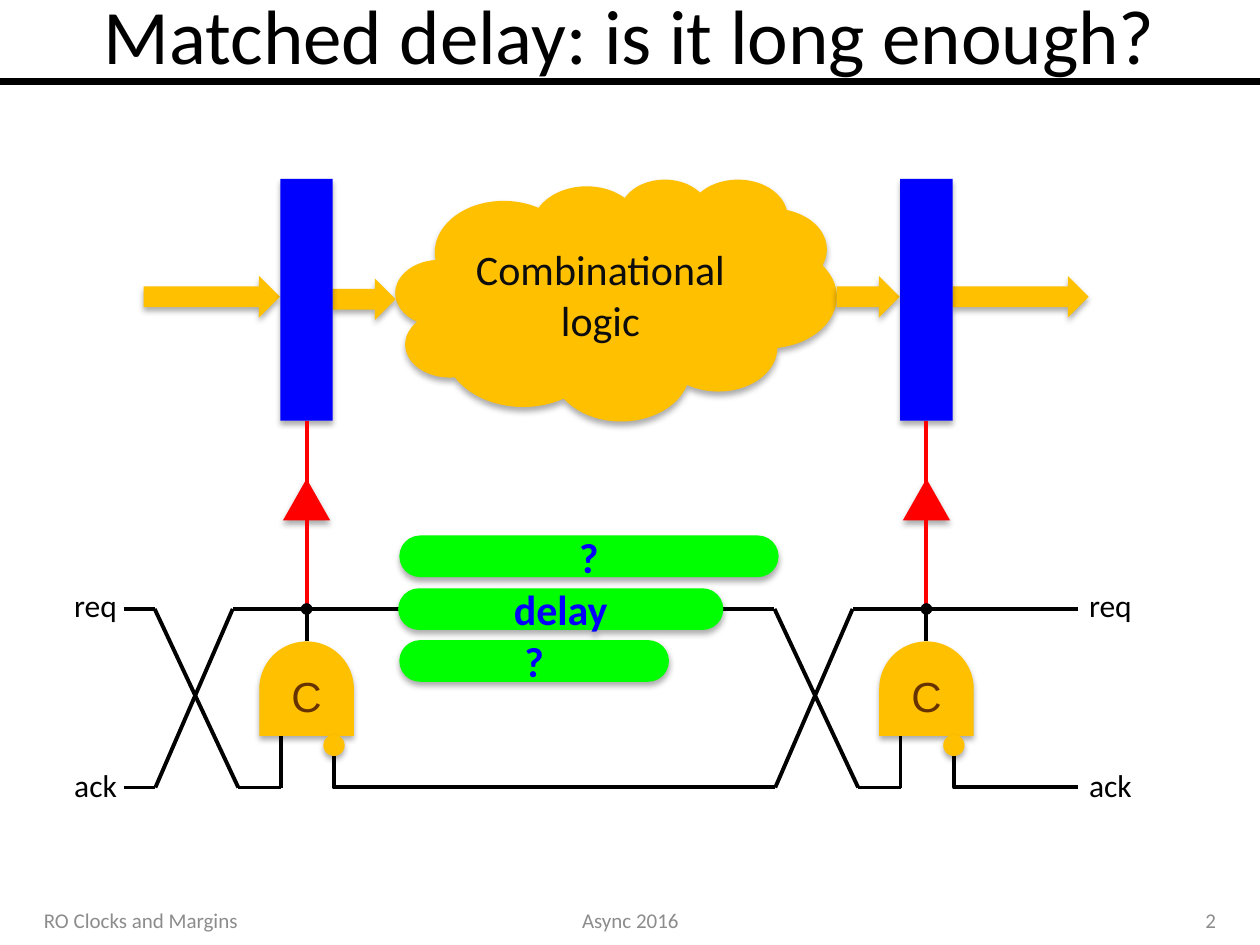
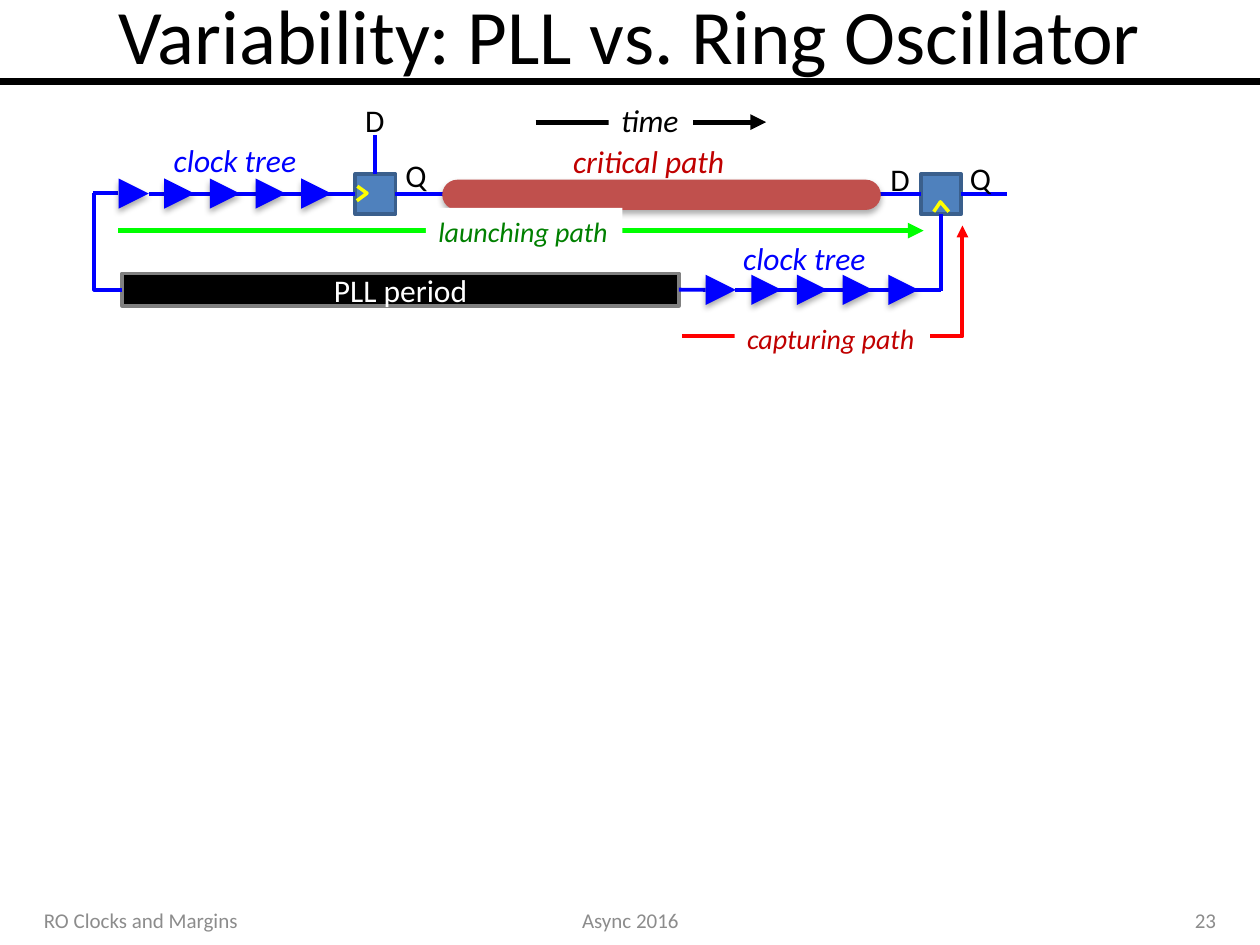
"""Build two slides on matched delays and clock variability."""
from dataclasses import dataclass
from typing import Any, Optional, Sequence

from lxml import etree
from pptx import Presentation
from pptx.dml.color import RGBColor
from pptx.enum.shapes import MSO_CONNECTOR, MSO_SHAPE
from pptx.enum.text import MSO_ANCHOR, MSO_AUTO_SIZE, PP_ALIGN
from pptx.oxml.ns import qn
from pptx.util import Pt

RECT = MSO_SHAPE.RECTANGLE
CAPSULE = MSO_SHAPE.ROUNDED_RECTANGLE
ARROW = MSO_SHAPE.RIGHT_ARROW
TRIANGLE = MSO_SHAPE.ISOSCELES_TRIANGLE
CLOUD = MSO_SHAPE.CLOUD
GATE = MSO_SHAPE.FLOWCHART_DELAY
CIRCLE = MSO_SHAPE.OVAL
STRAIGHT = MSO_CONNECTOR.STRAIGHT
ELBOW = MSO_CONNECTOR.ELBOW
MIDDLE = MSO_ANCHOR.MIDDLE
LEFT, CENTER, RIGHT = PP_ALIGN.LEFT, PP_ALIGN.CENTER, PP_ALIGN.RIGHT
FIT = MSO_AUTO_SIZE.SHAPE_TO_FIT_TEXT
TOP_SIDE, LEFT_SIDE, BOTTOM_SIDE, RIGHT_SIDE = range(4)

COLORS = {
    "black": "000000", "white": "FFFFFF", "ink": "0D0D0D", "footer": "8C8C8C",
    "blue": "0000FF", "red": "FF0000", "amber": "FFC000", "brown": "663300",
    "lime": "00FF00", "green": "008000", "crimson": "C00000", "brick": "C0504D",
    "steel": "4F81BD", "steel_edge": "3A5F8C", "gray": "808080", "yellow": "FFFF00",
}
STAGE_PITCH = 354.2
REQ_Y, ACK_Y = 348, 450
BUFFER_COUNT, BUFFER_PITCH, BUFFER_SIZE = 5, 26.1, 17.3


@dataclass(frozen=True)
class Words:
    """Text and its look."""
    text: str
    size: float
    color: str = "black"
    font: str = "Calibri"
    bold: bool = False
    italic: bool = False
    align: Any = CENTER


@dataclass(frozen=True)
class Block:
    """A filled shape, in points."""
    kind: Any
    left: float
    top: float
    width: float
    height: float
    fill: str
    words: Optional[Words] = None
    edge: Optional[str] = None
    shadow: bool = True
    turn: float = 0


@dataclass(frozen=True)
class Label:
    """A text box, in points."""
    left: float
    top: float
    width: float
    height: float
    words: Words
    fill: Optional[str] = None
    fitted: bool = True


@dataclass(frozen=True)
class Wire:
    """A line between two points, with optional joints given as (shape, side)."""
    start: tuple
    end: tuple
    color: str = "black"
    weight: float = 2.25
    tip: Optional[str] = None
    begin_at: Optional[tuple] = None
    end_at: Optional[tuple] = None
    bent: bool = False


def rgb(name: str) -> RGBColor:
    """Look up a named colour."""
    return RGBColor.from_string(COLORS[name])


def write(frame: Any, words: Words) -> None:
    """Put words into a text frame."""
    para = frame.paragraphs[0]
    para.alignment = words.align
    for index, line in enumerate(words.text.split("\n")):
        if index:
            para.add_line_break()
        span = para.add_run()
        span.text = line
        span.font.size = Pt(words.size)
        span.font.name = words.font
        span.font.bold = words.bold
        span.font.italic = words.italic
        span.font.color.rgb = rgb(words.color)


def cast_shadow(shape: Any) -> None:
    """Add a soft shadow below a shape."""
    effects = shape.element.spPr.find(qn("a:effectLst"))
    outer = etree.SubElement(effects, qn("a:outerShdw"), blurRad=str(Pt(3.5)),
                             dist=str(Pt(2.2)), dir="5400000", rotWithShape="0")
    color = etree.SubElement(outer, qn("a:srgbClr"), val=COLORS["black"])
    etree.SubElement(color, qn("a:alpha"), val="32000")


def draw_block(page: Any, block: Block) -> Any:
    """Draw a filled shape."""
    shape = page.shapes.add_shape(block.kind, Pt(block.left), Pt(block.top),
                                  Pt(block.width), Pt(block.height))
    shape.rotation = block.turn
    shape.fill.solid()
    shape.fill.fore_color.rgb = rgb(block.fill)
    if block.edge:
        shape.line.color.rgb = rgb(block.edge)
        shape.line.width = Pt(2)
    else:
        shape.line.fill.background()
    shape.shadow.inherit = False
    if block.shadow:
        cast_shadow(shape)
    if block.kind == CAPSULE:
        shape.adjustments[0] = 0.5
    if block.words:
        shape.text_frame.vertical_anchor = MIDDLE
        write(shape.text_frame, block.words)
    return shape


def draw_label(page: Any, label: Label) -> None:
    """Draw a text box."""
    box = page.shapes.add_textbox(Pt(label.left), Pt(label.top),
                                  Pt(label.width), Pt(label.height))
    frame = box.text_frame
    frame.word_wrap = not label.fitted
    if label.fitted:
        frame.auto_size = FIT
    else:
        frame.vertical_anchor = MIDDLE
    if label.fill:
        box.fill.solid()
        box.fill.fore_color.rgb = rgb(label.fill)
    write(frame, label.words)


def draw_wire(page: Any, wire: Wire) -> None:
    """Draw a straight or one-corner line."""
    line = page.shapes.add_connector(ELBOW if wire.bent else STRAIGHT,
                                     *map(Pt, wire.start + wire.end))
    if wire.begin_at:
        line.begin_connect(*wire.begin_at)
    if wire.end_at:
        line.end_connect(*wire.end_at)
    line.line.color.rgb = rgb(wire.color)
    line.line.width = Pt(wire.weight)
    props = line.element.spPr
    if wire.bent:
        props.find(qn("a:prstGeom")).set("prst", "bentConnector2")
    if wire.tip:
        etree.SubElement(props.find(qn("a:ln")), qn("a:tailEnd"), type=wire.tip)
    etree.SubElement(props, qn("a:effectLst"))


def draw_route(page: Any, points: Sequence[tuple]) -> None:
    """Draw black wires through a row of points."""
    for start, end in zip(points, points[1:]):
        draw_wire(page, Wire(start, end))


def draw_chevron(page: Any, points: Sequence[tuple]) -> None:
    """Draw the clock mark of a flip-flop."""
    corners = [tuple(map(Pt, point)) for point in points]
    builder = page.shapes.build_freeform(*corners[0], scale=1.0)
    builder.add_line_segments(corners[1:], close=False)
    mark = builder.convert_to_shape()
    mark.fill.background()
    mark.line.color.rgb = rgb("yellow")
    mark.line.width = Pt(2)
    mark.shadow.inherit = False


def add_page(deck: Any, title: str, number: str) -> Any:
    """Add a page with title, rule and footers."""
    page = deck.slides.add_slide(deck.slide_layouts[6])
    draw_wire(page, Wire((0, 46.8), (720, 46.8), weight=4))
    draw_label(page, Label(36, -7.9, 648, 54, Words(title, 44), fitted=False))
    footers = ((18, 167.8, "RO Clocks and Margins", LEFT),
               (246.2, 228.2, "Async 2016", CENTER),
               (534.2, 167.8, number, RIGHT))
    for left, width, text, align in footers:
        words = Words(text, 12, "footer", align=align)
        draw_label(page, Label(left, 511.2, width, 28.8, words, fitted=False))
    return page


def draw_stage(page: Any, shift: float) -> None:
    """Draw a register with its clock driver and C element."""
    center = 175.2 + shift
    register = draw_block(page, Block(RECT, center - 15, 102.2, 30, 138.2, "blue"))
    draw_block(page, Block(TRIANGLE, center - 13.5, 273.6, 27, 23.8, "red"))
    draw_wire(page, Wire((center, 240.4), (center, 275.8), "red",
                         begin_at=(register, BOTTOM_SIDE)))
    draw_wire(page, Wire((center, 297.4), (center, REQ_Y), "red"))
    draw_wire(page, Wire((center, 366.5), (center, REQ_Y), tip="oval"))
    draw_route(page, [(88.4 + shift, REQ_Y), (136.2 + shift, ACK_Y),
                      (160.4 + shift, ACK_Y), (160.4 + shift, 419.8)])
    draw_route(page, [(center, REQ_Y), (133 + shift, REQ_Y), (88.8 + shift, ACK_Y)])
    gate = draw_block(page, Block(GATE, center - 27, 366.5, 54, 54, "amber",
                                  Words("C", 24, "brown", "Arial"), turn=270))
    gate.text_frame.word_wrap = False
    gate.text_frame._txBody.bodyPr.set("vert", "vert")
    draw_block(page, Block(CIRCLE, center + 9.6, 419.8, 12.2, 12.2, "amber"))


def build_matched_delay(deck: Any) -> None:
    """Build the matched delay page."""
    page = add_page(deck, "Matched delay: is it long enough?", "2")
    draw_block(page, Block(CLOUD, 226.1, 102.2, 252, 138.2, "amber",
                           Words("Combinational\nlogic", 24, "ink")))
    for left, top, width in ((82.1, 157.7, 77.8), (190.1, 159.1, 36),
                             (478.1, 157.7, 36), (544.3, 157.7, 77.8)):
        draw_block(page, Block(ARROW, left, top, width, 23.8, "amber"))
    for shift in (0, STAGE_PITCH):
        draw_stage(page, shift)
    for start, end, y in ((70.6, 88.6, REQ_Y), (175.2, 442.4, REQ_Y),
                          (529.4, 616.3, REQ_Y), (70.6, 88.6, ACK_Y)):
        draw_wire(page, Wire((start, y), (end, y)))
    for start, end in ((443.2, 190.8), (616.3, 545.3)):
        draw_wire(page, Wire((start, ACK_Y), (end, 432), bent=True))
    for left, top, width, text in ((227.5, 336.2, 185.8, "delay"),
                                   (228.2, 365.8, 154.1, "?"),
                                   (228.2, 306, 216.7, "?")):
        draw_block(page, Block(CAPSULE, left, top, width, 23.8, "lime",
                               Words(text, 24, "blue", bold=True)))
    for left in (35.3, 615.2):
        for top, text in ((331.2, "req"), (434.2, "ack")):
            draw_label(page, Label(left, top, 39.2, 28.8, Words(text, 18, align=LEFT)))


def draw_buffers(page: Any, left: float, top: float) -> None:
    """Draw the row of buffers of a clock tree."""
    for index in range(BUFFER_COUNT):
        draw_block(page, Block(TRIANGLE, left + index * BUFFER_PITCH, top,
                               BUFFER_SIZE, BUFFER_SIZE, "blue", turn=90))


def build_variability(deck: Any) -> None:
    """Build the clock variability page."""
    page = add_page(deck, "Variability: PLL vs. Ring Oscillator", "23")
    launch, capture = (
        draw_block(page, Block(RECT, left, 99.4, 23, 23, "steel", edge="steel_edge",
                               shadow=False)) for left in (203, 526.3))
    period = draw_block(page, Block(RECT, 69.8, 156.2, 318.2, 18.7, "black",
                                    Words("PLL period", 18, "white"), "gray", False))
    wires = (
        Wire((419.8, 165.6), (537.8, 165.6), "blue"),
        Wire((403.2, 165.6), (388, 165.6), "blue", end_at=(period, RIGHT_SIDE)),
        Wire((69.8, 165.6), (54, 110.4), "blue", begin_at=(period, LEFT_SIDE), bent=True),
        Wire((85, 110.9), (203, 110.9), "blue", end_at=(launch, LEFT_SIDE)),
        Wire((67.7, 110.4), (53, 110.4), "blue"),
        Wire((526.3, 110.9), (226, 110.9), "blue", begin_at=(capture, LEFT_SIDE),
             end_at=(launch, RIGHT_SIDE)),
        Wire((537.8, 122.4), (537.8, 166.5), "blue", begin_at=(capture, BOTTOM_SIDE)),
        Wire((214.5, 99.4), (214.5, 77), "blue", begin_at=(launch, TOP_SIDE)),
        Wire((549.3, 110.9), (575.3, 110.9), "blue", begin_at=(capture, RIGHT_SIDE)),
        Wire((67.7, 131.8), (527.8, 131.8), "lime", 3, "triangle"),
        Wire((306, 69.8), (437.8, 69.8), "black", 3, "triangle"),
        Wire((390, 192.2), (550, 128.9), "red", tip="triangle", bent=True),
    )
    for wire in wires:
        draw_wire(page, wire)
    draw_buffers(page, 67.7, 102)
    draw_buffers(page, 403.2, 157)
    draw_block(page, Block(CAPSULE, 252.7, 102.7, 250.6, 17.3, "brick"))
    draw_chevron(page, [(204.2, 106.4), (209.7, 110.4), (203.9, 114.7)])
    draw_chevron(page, [(533.6, 121), (537.4, 115.4), (542.2, 121)])
    for left, top, text in ((224.6, 85.7, "Q"), (201.6, 54, "D"),
                            (501.8, 87.8, "D"), (547.2, 87.1, "Q")):
        draw_label(page, Label(left, top, 26.3, 28.8, Words(text, 18, align=LEFT)))
    captions = (
        (243.4, 118.8, 112.3, 26.6, "launching path", 16, "green", "white"),
        (419.8, 180, 111.6, 26.6, "capturing path", 16, "crimson", "white"),
        (347.8, 54, 48.2, 28.8, "time", 18, "black", "white"),
        (92.2, 77, 86.4, 28.8, "clock tree", 18, "blue", None),
        (417.6, 133.2, 86.4, 28.8, "clock tree", 18, "blue", None),
        (320.4, 77.8, 102.2, 28.8, "critical path", 18, "crimson", None),
    )
    for left, top, width, height, text, size, color, fill in captions:
        words = Words(text, size, color, italic=True, align=LEFT)
        draw_label(page, Label(left, top, width, height, words, fill))


def main() -> None:
    """Build and save the deck."""
    deck = Presentation()
    deck.slide_width, deck.slide_height = Pt(720), Pt(540)
    build_matched_delay(deck)
    build_variability(deck)
    deck.save("out.pptx")


if __name__ == "__main__":
    main()
